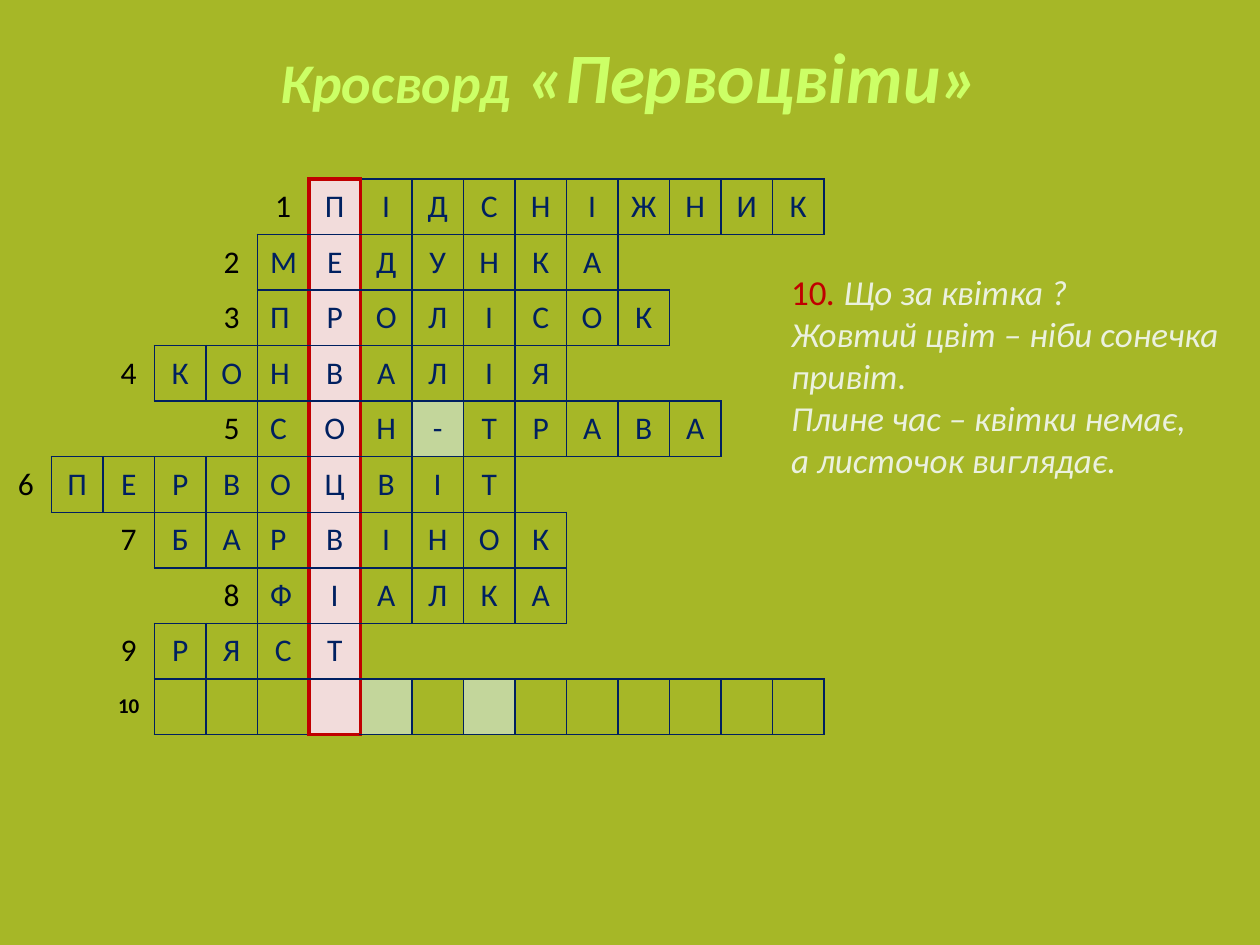
from lxml.etree import SubElement
from pptx import Presentation
from pptx.dml.color import RGBColor
from pptx.enum.text import MSO_ANCHOR, MSO_AUTO_SIZE, PP_ALIGN
from pptx.oxml.ns import qn
from pptx.util import Pt

COLORS = {
    "background": "A6B727", "title": "CCFF66", "ink": "002060",
    "number": "000000", "key": "C00000", "key_fill": "F2DCDB",
    "accent_fill": "C3D69B", "clue": "EBF1DE",
}
FONT = "Calibri"
TITLE = [("Кросворд", 32), (" «Первоцвіти»", 40.5)]
ANSWERS = [
    (5, "ПІДСНІЖНИК"), (4, "МЕДУНКА"), (4, "ПРОЛІСОК"), (2, "КОНВАЛІЯ"),
    (4, "СОН-ТРАВА"), (0, "ПЕРВОЦВІТ"), (2, "БАРВІНОК"), (4, "ФІАЛКА"),
    (2, "РЯСТ"), (2, " " * 13),
]
CLUE = [
    ["Що за квітка ?", "Жовтий цвіт – ніби сонечка", "привіт."],
    ["Плине час – квітки немає,"],
    ["а листочок виглядає."],
]
COLUMNS, KEY_COLUMN = 16, 6
CELL_WIDTH, CELL_HEIGHT = 29.43, 31.75
ACCENTS = {(4, 8), (9, 7), (9, 9)}
LEFT_ALIGNED = {(row, 5) for row in range(2, 8)}
SIDES = {"lnL": (0, -1), "lnR": (0, 1), "lnT": (-1, 0), "lnB": (1, 0)}
LETTERS = {
    (row, start + 1 + index): letter
    for row, (start, word) in enumerate(ANSWERS)
    for index, letter in enumerate(word)
}


def add_run(paragraph, text, size, color, bold=False, italic=False):
    """Add one formatted run to a paragraph."""
    run = paragraph.add_run()
    run.text = text
    run.font.name, run.font.size = FONT, Pt(size)
    run.font.bold, run.font.italic = bold, italic
    run.font.color.rgb = RGBColor.from_string(COLORS[color])


def border_style(place, neighbour):
    """Return the colour and width of the edge between two cells, or None."""
    if place not in LETTERS and neighbour not in LETTERS:
        return None
    pair = [spot for spot in (place, neighbour) if spot in LETTERS]
    in_key = [spot[1] == KEY_COLUMN for spot in (place, neighbour)]
    beside_key = in_key[0] != in_key[1]
    end_of_key = all(in_key) and neighbour[0] in (-1, len(ANSWERS))
    if pair and (beside_key or end_of_key):
        return "key", 2.25
    return "ink", 1


def draw_borders(cell, place):
    """Write the four border lines of a cell."""
    properties = cell._tc.get_or_add_tcPr()
    for index, (tag, (down, across)) in enumerate(SIDES.items()):
        style = border_style(place, (place[0] + down, place[1] + across))
        line = properties.makeelement(qn("a:" + tag))
        properties.insert(index, line)
        if style is None:
            SubElement(line, qn("a:noFill"))
            continue
        color, width = style
        line.set("w", str(Pt(width)))
        fill = SubElement(line, qn("a:solidFill"))
        SubElement(fill, qn("a:srgbClr")).set("val", COLORS[color])


def fill_cell(cell, place):
    """Give a crossword cell its fill, text and borders."""
    row, column = place
    cell.vertical_anchor = MSO_ANCHOR.MIDDLE
    shade = None
    if column == KEY_COLUMN:
        shade = "key_fill"
    elif place in ACCENTS:
        shade = "accent_fill"
    if shade:
        cell.fill.solid()
        cell.fill.fore_color.rgb = RGBColor.from_string(COLORS[shade])
    else:
        cell.fill.background()
    paragraph = cell.text_frame.paragraphs[0]
    paragraph.alignment = PP_ALIGN.LEFT if place in LEFT_ALIGNED else PP_ALIGN.CENTER
    if column == ANSWERS[row][0]:
        last = row == len(ANSWERS) - 1
        add_run(paragraph, str(row + 1), 12 if last else 18, "number", bold=last)
    elif LETTERS.get(place, " ") != " ":
        add_run(paragraph, LETTERS[place], 18, "ink")
    draw_borders(cell, place)


def add_crossword(slide):
    """Add the crossword table."""
    rows = len(ANSWERS)
    crossword = slide.shapes.add_table(
        rows, COLUMNS, Pt(0), Pt(102.24),
        Pt(COLUMNS * CELL_WIDTH), Pt(rows * CELL_HEIGHT)).table
    crossword.first_row = crossword.horz_banding = False
    for column in crossword.columns:
        column.width = Pt(CELL_WIDTH)
    for row, line in enumerate(crossword.rows):
        line.height = Pt(CELL_HEIGHT)
        for column, cell in enumerate(line.cells):
            fill_cell(cell, (row, column))


def add_title(slide):
    """Place and fill the title."""
    title = slide.shapes.title
    title.left, title.top, title.width, title.height = Pt(36), Pt(15), Pt(648), Pt(90)
    title.text_frame.vertical_anchor = MSO_ANCHOR.TOP
    paragraph = title.text_frame.paragraphs[0]
    paragraph.alignment = PP_ALIGN.CENTER
    for text, size in TITLE:
        add_run(paragraph, text, size, "title", bold=True, italic=True)


def add_clue(slide):
    """Add the riddle for the last word."""
    frame = slide.shapes.add_textbox(Pt(445), Pt(151.2), Pt(265), Pt(128)).text_frame
    frame.word_wrap = False
    frame.auto_size = MSO_AUTO_SIZE.SHAPE_TO_FIT_TEXT
    for number, lines in enumerate(CLUE):
        paragraph = frame.add_paragraph() if number else frame.paragraphs[0]
        if number == 0:
            add_run(paragraph, str(len(ANSWERS)), 20, "key")
            add_run(paragraph, ". ", 20, "key", italic=True)
        for index, text in enumerate(lines):
            if index:
                paragraph.add_line_break()
            add_run(paragraph, text, 20, "clue", italic=True)


def main():
    """Build the crossword slide."""
    deck = Presentation()
    deck.slide_width, deck.slide_height = Pt(720), Pt(540)
    slide = deck.slides.add_slide(deck.slide_layouts[5])
    slide.background.fill.solid()
    slide.background.fill.fore_color.rgb = RGBColor.from_string(COLORS["background"])
    add_crossword(slide)
    add_title(slide)
    add_clue(slide)
    deck.save("out.pptx")


if __name__ == "__main__":
    main()
